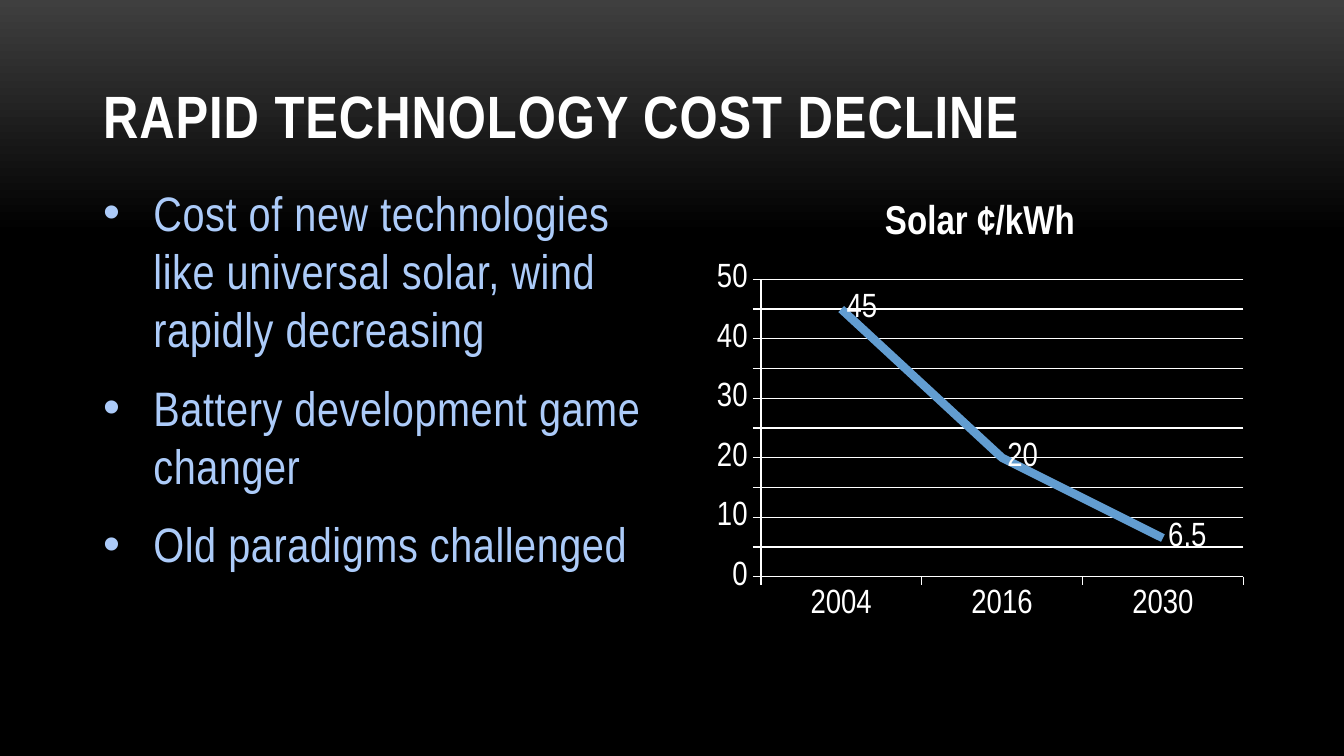
from lxml.etree import SubElement as Sub
from pptx import Presentation
from pptx.chart.data import CategoryChartData as Data
from pptx.dml.color import RGBColor
from pptx.enum.chart import XL_CHART_TYPE as Kind, XL_LABEL_POSITION as Spot
from pptx.enum.chart import XL_MARKER_STYLE as Mark, XL_TICK_MARK as Tick
from pptx.enum.text import MSO_ANCHOR as Anchor, MSO_AUTO_SIZE as Fit, PP_ALIGN as Align
from pptx.oxml.ns import qn
from pptx.util import Inches, Pt

WIDE = 10
HIGH = WIDE * 9 / 16
COL, ROW = WIDE / 15, HIGH / 24
TOP, DEEP = 5.6, 14.4
INDENT = Inches(3 / 8)
FACE = "Arial Narrow"
WHITE, PALE, BLUE = "FFFFFF", "ACCBF9", "629DD1"

POINTS = [
    "Cost of new technologies like universal solar, wind rapidly decreasing",
    "Battery development game changer",
    "Old paradigms challenged",
]


def tint(code):
    return RGBColor.from_string(code)


def area(x, y, w, h):
    """Turn columns and rows of the grid into lengths."""
    return [Inches(n) for n in (x * COL, y * ROW, w * COL, h * ROW)]


def style(font, size, code, bold=False):
    look = {"name": FACE, "size": Pt(size), "bold": bold}
    for key, value in look.items():
        setattr(font, key, value)
    font.color.rgb = tint(code)


def place(shape, box):
    for key, value in zip(("left", "top", "width", "height"), box):
        setattr(shape, key, value)


def write(para, text, size, code, gap, bold=False):
    """Add one run with letter spacing given in points."""
    run = para.add_run()
    run.text = text
    style(run.font, size, code, bold)
    run.font._element.set("spc", str(round(gap * 100)))
    para.alignment = Align.LEFT


def paint(slide):
    fill = slide.background.fill
    fill.gradient()
    fill.gradient_angle = 270
    for stop, (spot, code) in zip(fill.gradient_stops, [(0, "3F3F3F"), (0.31, "000000")]):
        stop.position = spot
        stop.color.rgb = tint(code)


def head(shape, text):
    place(shape, area(1, 1, 13, 4))
    frame = shape.text_frame
    frame.auto_size = Fit.NONE
    frame.vertical_anchor = Anchor.BOTTOM
    write(frame.paragraphs[0], text, 32, WHITE, 0.5, True)


def bullet(para):
    props = para._p.get_or_add_pPr()
    props.set("marL", str(INDENT))
    props.set("indent", str(-INDENT))
    color = Sub(props, qn("a:buClr"))
    Sub(color, qn("a:srgbClr"), val=PALE)
    Sub(props, qn("a:buFont"), typeface="Arial")
    Sub(props, qn("a:buChar"), char="•")


def points(shape, lines):
    place(shape, area(1, TOP, 6.5, DEEP))
    frame = shape.text_frame
    frame.auto_size = Fit.NONE
    for i, line in enumerate(lines):
        para = frame.add_paragraph() if i else frame.paragraphs[0]
        bullet(para)
        para.space_before = Pt(5 if i else 0)
        para.space_after = Pt(6)
        write(para, line, 25.9, PALE, 0.3)


def fix_plot(chart, box):
    """Set the inner plot area, in percent of the chart's size."""
    plot = chart._chartSpace.chart.plotArea
    for old in plot.findall(qn("c:layout")):
        plot.remove(old)
    layout = Sub(plot, qn("c:layout"))
    plot.insert(0, layout)
    manual = Sub(layout, qn("c:manualLayout"))
    rules = {"layoutTarget": "inner", "xMode": "edge", "yMode": "edge"}
    rules.update((key, part / 100) for key, part in zip("xywh", box))
    for key, value in rules.items():
        Sub(manual, qn("c:" + key), val=str(value))


def rule(line):
    line.color.rgb = tint(WHITE)
    line.width = Pt(0.75)


def graph(slide, name, cats, vals):
    data = Data()
    data.categories = cats
    data.add_series(name, vals)
    box = area(7.88, TOP, 6.12, DEEP)
    chart = slide.shapes.add_chart(Kind.LINE, *box, data).chart
    style(chart.font, 18, WHITE)
    chart.has_legend = False
    chart.has_title = True
    para = chart.chart_title.text_frame.paragraphs[0]
    para.text = name
    style(para.runs[0].font, 21.6, WHITE, True)
    fix_plot(chart, (10, 22.7, 88, 65.6))

    for axis in (chart.category_axis, chart.value_axis):
        axis.major_tick_mark = Tick.OUTSIDE
        axis.minor_tick_mark = Tick.NONE
        rule(axis.format.line)
    scale = {"minimum_scale": 0, "maximum_scale": 50, "major_unit": 5, "has_major_gridlines": True}
    for key, value in scale.items():
        setattr(chart.value_axis, key, value)
    rule(chart.value_axis.major_gridlines.format.line)

    plot = chart.plots[0]
    plot.vary_by_categories = False
    line = plot.series[0]
    line.smooth = False
    line.marker.style = Mark.NONE
    line.format.line.color.rgb = tint(BLUE)
    line.format.line.width = Pt(4.5)
    tags = line.data_labels
    tags.show_value = True
    tags.position = Spot.RIGHT
    style(tags.font, 18, WHITE)


def main():
    deck = Presentation()
    deck.slide_width, deck.slide_height = Inches(WIDE), Inches(HIGH)
    slide = deck.slides.add_slide(deck.slide_layouts[1])
    paint(slide)
    head(slide.shapes.title, "RAPID TECHNOLOGY COST DECLINE")
    points(slide.placeholders[1], POINTS)
    graph(slide, "Solar ¢/kWh", ["2004", "2016", "2030"], [45, 20, 6.5])
    deck.save("out.pptx")


if __name__ == "__main__":
    main()
